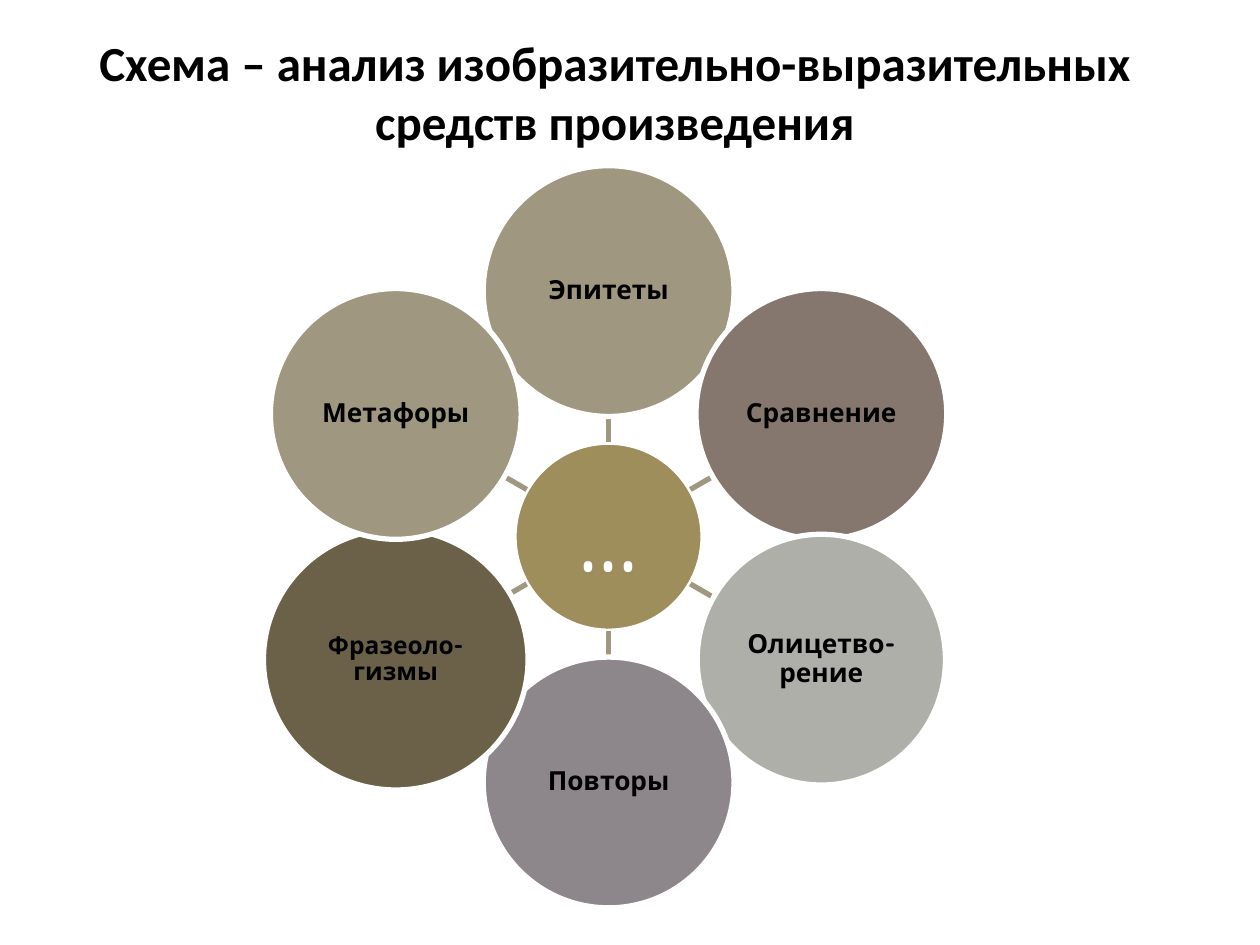
from math import cos, radians, sin

from lxml import etree
from pptx import Presentation
from pptx.dml.color import RGBColor
from pptx.enum.shapes import MSO_CONNECTOR as Connector, MSO_SHAPE as Shape
from pptx.enum.text import MSO_ANCHOR as Anchor, PP_ALIGN as Align
from pptx.oxml.ns import qn
from pptx.util import Inches, Pt

COLORS = {
    "black": "000000",
    "white": "FFFFFF",
    "hub": "9E8E5C",
    "khaki": "A09781",
    "brown": "85776D",
    "gray": "AEAFA9",
    "mauve": "8D878B",
    "olive": "6B6149",
}

# Label, fill, width, height, text size; clockwise from the top
DEVICES = [
    ("Эпитеты", "khaki", 1.99, 1.99, 15),
    ("Сравнение", "brown", 1.99, 1.99, 15),
    ("Олицетво-рение", "gray", 1.97, 1.99, 15),
    ("Повторы", "mauve", 1.99, 1.99, 15),
    ("Фразеоло-гизмы", "olive", 2.1, 2.07, 14),
    ("Метафоры", "khaki", 1.99, 1.99, 15),
]

CENTER_X, CENTER_Y = 4.83, 4.26
HUB_SIZE = 1.5
RING_RADIUS = 1.95


def ring_point(angle, distance):
    return (CENTER_X + distance * cos(radians(angle)),
            CENTER_Y + distance * sin(radians(angle)))


class SlideBuilder:
    title_font = "Calibri"
    diagram_font = "Quicksand"
    line_width = Pt(3)

    def __init__(self, slide):
        self.slide = slide

    def color(self, name):
        return RGBColor.from_string(COLORS[name])

    def set_text(self, frame, text, font, size, color, bold):
        frame.word_wrap = True
        frame.text = text
        paragraph = frame.paragraphs[0]
        paragraph.alignment = Align.CENTER
        for run in paragraph.runs:
            run.font.name = font
            run.font.size = Pt(size)
            run.font.bold = bold
            run.font.color.rgb = self.color(color)
        return paragraph

    def title(self, text, left, top, width, height):
        box = self.slide.shapes.add_textbox(
            Inches(left), Inches(top), Inches(width), Inches(height))
        self.set_text(box.text_frame, text, self.title_font, 28, "black", True)

    def circle(self, text, center, width, height, fill, size,
               color="black", bold=True, inset=0.01):
        x, y = center
        circle = self.slide.shapes.add_shape(
            Shape.OVAL, Inches(x - width / 2), Inches(y - height / 2),
            Inches(width), Inches(height))
        circle.shadow.inherit = False
        circle.fill.solid()
        circle.fill.fore_color.rgb = self.color(fill)
        circle.line.color.rgb = self.color("white")
        circle.line.width = self.line_width
        frame = circle.text_frame
        frame.margin_left = frame.margin_right = Inches(inset)
        frame.margin_top = frame.margin_bottom = Inches(inset)
        frame.vertical_anchor = Anchor.MIDDLE
        label = self.set_text(frame, text, self.diagram_font, size, color, bold)
        label.line_spacing = 0.9

    def spoke(self, start, end):
        ends = [Inches(value) for value in (*start, *end)]
        spoke = self.slide.shapes.add_connector(Connector.STRAIGHT, *ends)
        spoke.line.color.rgb = self.color("khaki")
        spoke.line.width = self.line_width
        etree.SubElement(spoke._element.spPr, qn("a:effectLst"))


def main():
    deck = Presentation()
    deck.slide_width, deck.slide_height = Inches(10), Inches(7.5)
    builder = SlideBuilder(deck.slides.add_slide(deck.slide_layouts[6]))

    # Title
    builder.title(
        "Схема – анализ изобразительно-выразительных средств произведения",
        0.51, 0.21, 8.74, 1.35)

    # Hub
    builder.circle("...", (CENTER_X, CENTER_Y), HUB_SIZE, HUB_SIZE, "hub", 63,
                   color="white", bold=False, inset=0.04)

    # Ring of expressive devices, each joined to the hub
    for index, (label, fill, width, height, size) in enumerate(DEVICES):
        angle = -90 + index * 360 / len(DEVICES)
        builder.spoke(ring_point(angle, HUB_SIZE / 2),
                      ring_point(angle, RING_RADIUS - width / 2))
        builder.circle(label, ring_point(angle, RING_RADIUS),
                       width, height, fill, size)

    deck.save("out.pptx")


if __name__ == "__main__":
    main()
